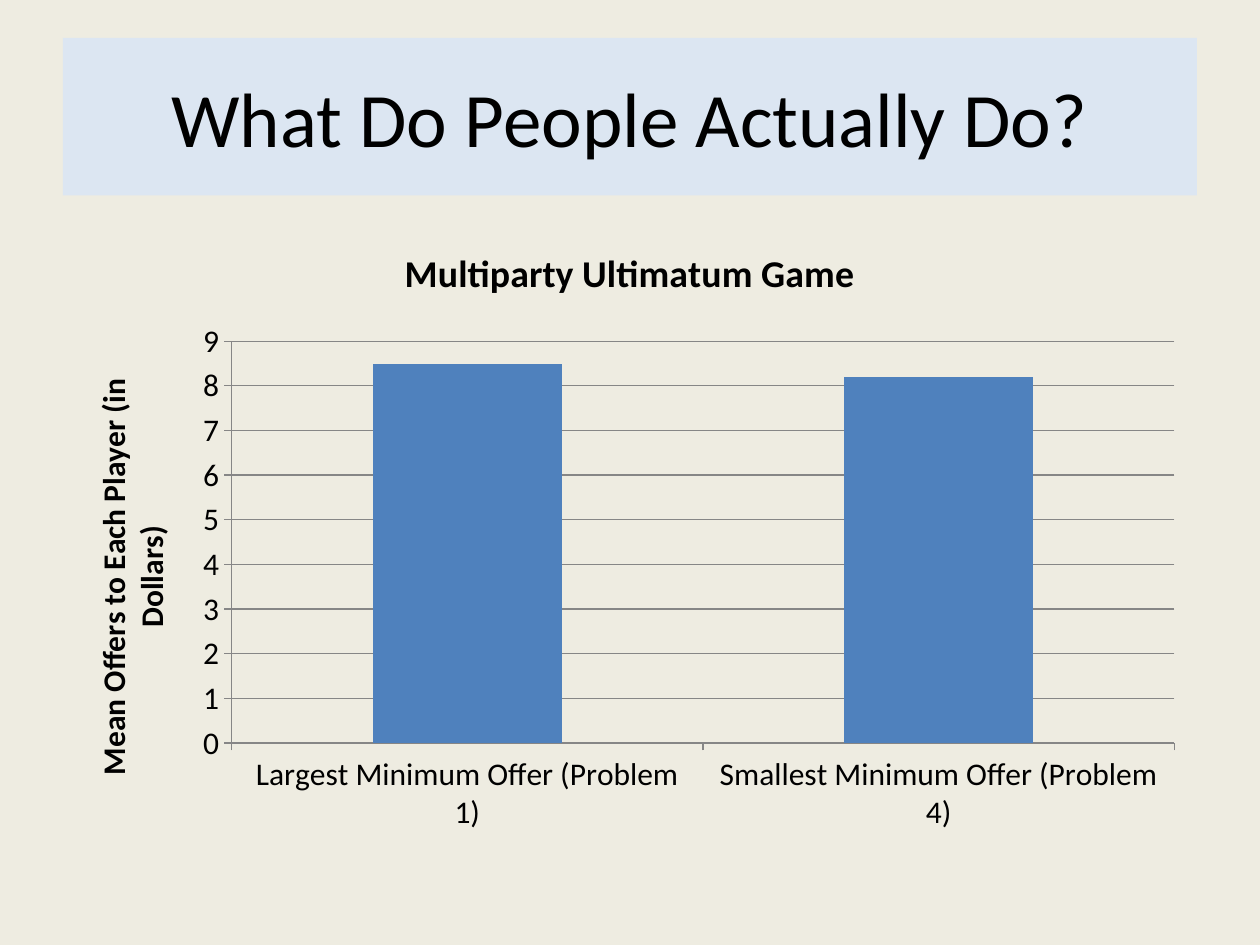
"""Build the slide on mean offers in the multiparty ultimatum game."""
from dataclasses import dataclass

from pptx import Presentation
from pptx.chart.data import CategoryChartData
from pptx.dml.color import RGBColor
from pptx.enum.chart import XL_CHART_TYPE, XL_TICK_MARK
from pptx.enum.shapes import MSO_SHAPE
from pptx.enum.text import MSO_ANCHOR, PP_ALIGN
from pptx.text.text import Font, TextFrame
from pptx.util import Inches, Pt


@dataclass(frozen=True)
class Theme:
    font: str = "Calibri"
    ink: RGBColor = RGBColor(0x00, 0x00, 0x00)
    background: RGBColor = RGBColor(0xEE, 0xEC, 0xE1)
    banner: RGBColor = RGBColor(0xDC, 0xE6, 0xF2)
    bar: RGBColor = RGBColor(0x4F, 0x81, 0xBD)
    rule: RGBColor = RGBColor(0x86, 0x86, 0x86)
    heading_size: float = 44
    chart_title_size: float = 21.6
    label_size: float = 18
    rule_width: float = 0.75


@dataclass(frozen=True)
class Box:
    left: float
    top: float
    width: float
    height: float

    def lengths(self) -> tuple:
        return tuple(map(Inches, (self.left, self.top, self.width, self.height)))


@dataclass(frozen=True)
class Offer:
    problem: str
    mean: float


THEME = Theme()
GAME = "Multiparty Ultimatum Game"
OFFERS = (
    Offer("Largest Minimum Offer (Problem 1)", 8.5),
    Offer("Smallest Minimum Offer (Problem 4)", 8.2),
)


def style_font(font: Font, size: float, bold: bool = False) -> None:
    font.name = THEME.font
    font.size = Pt(size)
    font.bold = bold
    font.color.rgb = THEME.ink


def write(frame: TextFrame, text: str, size: float, bold: bool = False) -> None:
    paragraph = frame.paragraphs[0]
    paragraph.alignment = PP_ALIGN.CENTER
    run = paragraph.add_run()
    run.text = text
    style_font(run.font, size, bold)


def style_rule(line) -> None:
    line.color.rgb = THEME.rule
    line.width = Pt(THEME.rule_width)


def add_heading(slide, text: str, box: Box) -> None:
    banner = slide.shapes.add_shape(MSO_SHAPE.RECTANGLE, *box.lengths())
    banner.shadow.inherit = False
    banner.fill.solid()
    banner.fill.fore_color.rgb = THEME.banner
    banner.line.fill.background()
    banner.text_frame.word_wrap = True
    banner.text_frame.vertical_anchor = MSO_ANCHOR.MIDDLE
    write(banner.text_frame, text, THEME.heading_size)


def add_offer_chart(slide, offers: tuple[Offer, ...], box: Box) -> None:
    offer_data = CategoryChartData()
    offer_data.categories = [offer.problem for offer in offers]
    offer_data.add_series(GAME, [offer.mean for offer in offers])
    chart = slide.shapes.add_chart(
        XL_CHART_TYPE.COLUMN_CLUSTERED, *box.lengths(), offer_data
    ).chart
    style_font(chart.font, THEME.label_size)
    chart.has_legend = False
    chart.has_title = True
    write(chart.chart_title.text_frame, GAME, THEME.chart_title_size, bold=True)
    chart.chart_title.include_in_layout = False

    bars = chart.plots[0]
    bars.gap_width = 150
    bars.vary_by_categories = False
    bars.series[0].format.fill.solid()
    bars.series[0].format.fill.fore_color.rgb = THEME.bar

    dollars = chart.value_axis
    dollars.minimum_scale, dollars.maximum_scale, dollars.major_unit = 0, 9, 1
    dollars.has_major_gridlines = True
    style_rule(dollars.major_gridlines.format.line)
    write(
        dollars.axis_title.text_frame,
        "Mean Offers to Each Player (in Dollars)",
        THEME.label_size,
        bold=True,
    )
    for axis in (dollars, chart.category_axis):
        axis.major_tick_mark = XL_TICK_MARK.OUTSIDE
        axis.minor_tick_mark = XL_TICK_MARK.NONE
        style_rule(axis.format.line)


def main() -> None:
    deck = Presentation()
    deck.slide_width, deck.slide_height = Inches(10), Inches(7.5)
    slide = deck.slides.add_slide(deck.slide_layouts[6])
    slide.background.fill.solid()
    slide.background.fill.fore_color.rgb = THEME.background
    add_heading(slide, "What Do People Actually Do?", Box(0.5, 0.3, 9, 1.25))
    add_offer_chart(slide, OFFERS, Box(0.5, 1.75, 9, 4.95))
    deck.save("out.pptx")


if __name__ == "__main__":
    main()
